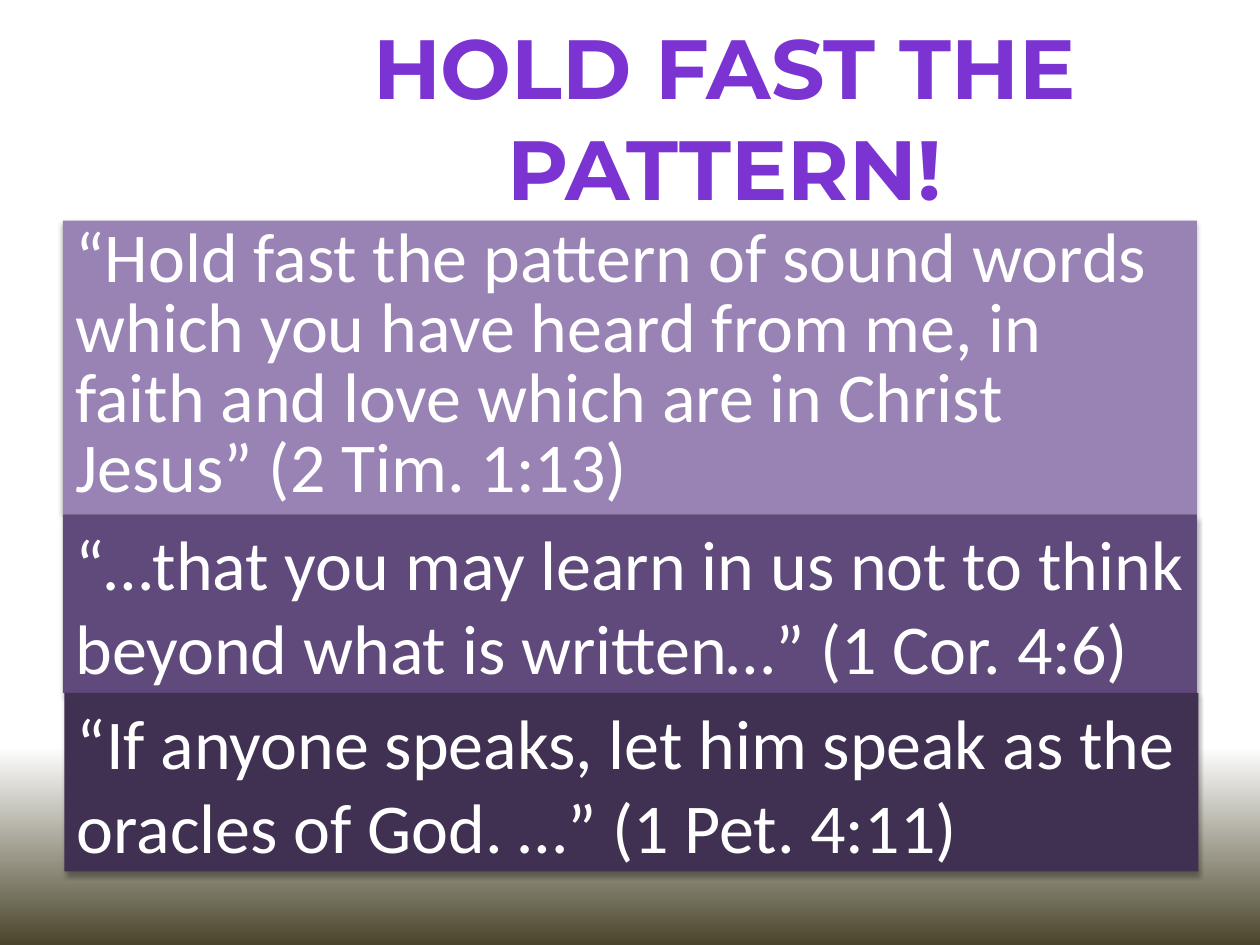
from lxml.etree import SubElement
from pptx import Presentation
from pptx.dml.color import RGBColor
from pptx.enum.shapes import MSO_SHAPE as Shape
from pptx.enum.text import MSO_ANCHOR as Anchor, PP_ALIGN as Align
from pptx.oxml.ns import qn
from pptx.util import Cm, Pt

WHITE = RGBColor(0xFF, 0xFF, 0xFF)
OLIVE = RGBColor(0x4A, 0x45, 0x2A)
VIOLET = RGBColor(0x7B, 0x34, 0xD2)
LILAC = RGBColor(0x99, 0x82, 0xB4)
PURPLE = RGBColor(0x60, 0x4A, 0x7B)
PLUM = RGBColor(0x40, 0x31, 0x52)


def add_text(box, text, font_name, size, color):
    box.text_frame.word_wrap = True
    para = box.text_frame.paragraphs[0]
    span = para.add_run()
    span.text = text
    span.font.name = font_name
    span.font.size = Pt(size)
    span.font.color.rgb = color
    return para


def add_shadow(box):
    box.shadow.inherit = False
    effects = box._element.spPr.find(qn("a:effectLst"))
    shadow = SubElement(effects, qn("a:outerShdw"), blurRad=str(Pt(3.1)),
                        dist=str(Pt(1.8)), dir="5400000", rotWithShape="0")
    color = SubElement(shadow, qn("a:srgbClr"), val="000000")
    SubElement(color, qn("a:alpha"), val="35000")


deck = Presentation()
deck.slide_width, deck.slide_height = Cm(25.4), Cm(19.05)
page = deck.slides.add_slide(deck.slide_layouts[6])

# Background: white fading to olive at the bottom
backdrop = page.background.fill
backdrop.gradient()
backdrop.gradient_angle = 270
for stop, position, color in zip(backdrop.gradient_stops, (0.79, 1), (WHITE, OLIVE)):
    stop.position = position
    stop.color.rgb = color

# Title
title = page.shapes.add_textbox(Cm(5.08), Cm(0.76), Cm(19.05), Cm(3.18))
title.text_frame.vertical_anchor = Anchor.MIDDLE
heading = add_text(title, "HOLD FAST THE PATTERN!", "Montserrat", 48, VIOLET)
heading.alignment = Align.CENTER
heading.runs[0].font.bold = True

# Stacked verses: left, height, fill, line spacing, text
verses = [
    (1.27, 5.92, LILAC, Pt(40),
     "“Hold fast the pattern of sound words which you have heard from me, "
     "in faith and love which are in Christ Jesus” (2 Tim. 1:13)"),
    (1.27, 3.6, PURPLE, None,
     "“…that you may learn in us not to think beyond what is written…” (1 Cor. 4:6)"),
    (1.3, 3.6, PLUM, None,
     "“If anyone speaks, let him speak as the oracles of God. …” (1 Pet. 4:11)"),
]
top = 4.45
for left, height, fill, spacing, text in verses:
    box = page.shapes.add_shape(Shape.RECTANGLE, Cm(left), Cm(top), Cm(22.86), Cm(height))
    box.fill.solid()
    box.fill.fore_color.rgb = fill
    box.line.fill.background()
    add_shadow(box)
    box.text_frame.vertical_anchor = Anchor.TOP
    para = add_text(box, text, "Calibri", 40, WHITE)
    para.alignment = Align.LEFT
    para.line_spacing = spacing
    top += height

deck.save("out.pptx")
